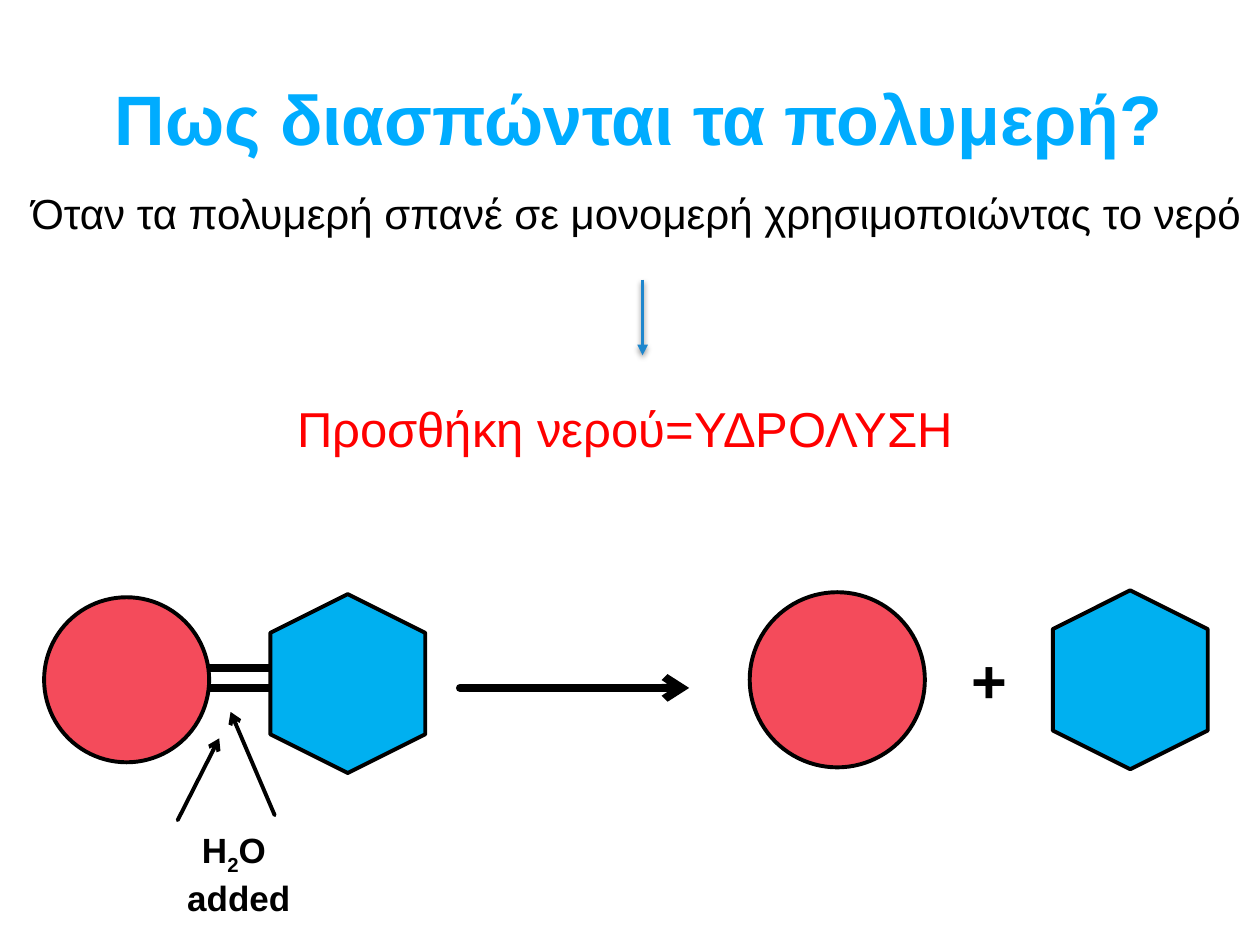
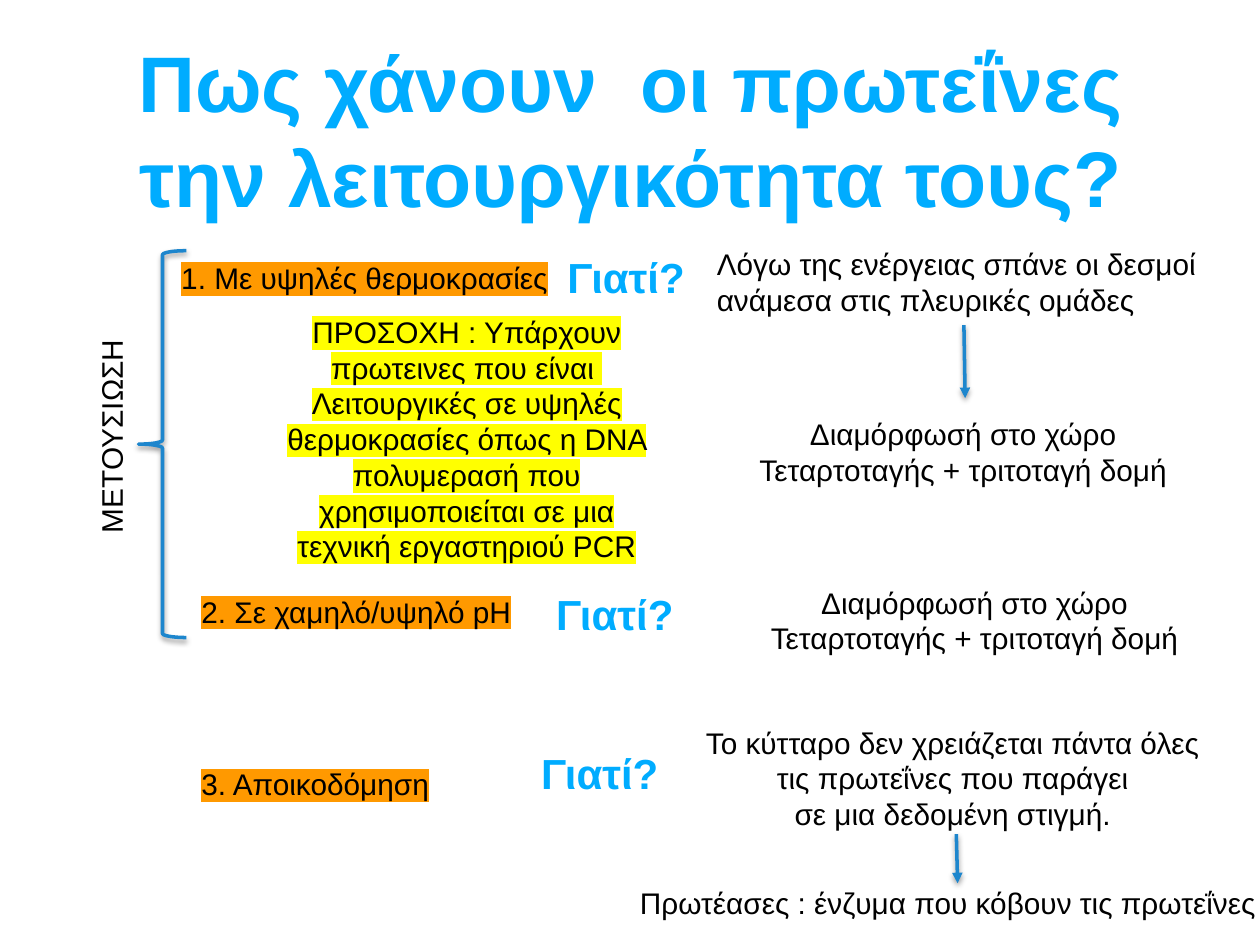
from dataclasses import dataclass
from typing import Optional

from lxml.etree import SubElement as Sub
from pptx import Presentation
from pptx.dml.color import RGBColor as Rgb
from pptx.enum.shapes import MSO_CONNECTOR as Link, MSO_SHAPE as Form
from pptx.enum.text import MSO_AUTO_SIZE as Fit, PP_ALIGN as Align
from pptx.oxml import parse_xml
from pptx.oxml.ns import nsdecls, qn
from pptx.util import Inches, Pt


# Shared look
@dataclass(frozen=True)
class Theme:
    font: str = "Arial"
    black: str = "000000"
    red: str = "FF0000"
    azure: str = "00ACFF"
    steel: str = "1D86CD"
    coral: str = "F44B5B"
    sky: str = "00B0F0"
    amber: str = "FF9900"
    yellow: str = "FFFF00"
    head: int = 40
    large: int = 45
    plus: int = 35
    key: int = 28
    lead: int = 24
    label: int = 20
    body: int = 17
    thick: float = 4.5
    edge: float = 2.25
    thin: float = 2


T = Theme()


@dataclass
class Text:
    box: tuple
    lines: list
    size: int = T.body
    color: str = T.black
    bold: bool = False
    mid: bool = False
    wrap: bool = False
    mark: Optional[str] = None
    turn: int = 0


@dataclass
class Line:
    start: tuple
    tip: tuple
    width: float = T.edge
    color: str = T.black
    arrow: Optional[str] = "arrow"
    shade: bool = False


@dataclass
class Shape:
    box: tuple
    form: Form
    fill: Optional[str] = None
    color: str = T.black
    width: float = T.edge
    turn: int = 0
    shade: bool = False


def set_all(target, values: dict) -> None:
    for name, value in values.items():
        setattr(target, name, value)


def shadow(props, shade: bool) -> None:
    """Soft drop shadow, or an empty list for none."""
    for old in props.findall(qn("a:effectLst")):
        props.remove(old)
    effects = Sub(props, qn("a:effectLst"))
    if shade:
        outer = Sub(effects, qn("a:outerShdw"), blurRad=str(Pt(3.1)),
                    dist=str(Pt(1.6)), dir="5400000", rotWithShape="0")
        color = Sub(outer, qn("a:srgbClr"), val=T.black)
        Sub(color, qn("a:alpha"), val="38000")


def stroke(line, color: str, width: float) -> None:
    line.color.rgb = Rgb.from_string(color)
    line.width = Pt(width)


def add_run(para, words: str, item: Text, low: bool) -> None:
    run = para.add_run()
    run.text = words
    set_all(run.font, {"size": Pt(item.size), "bold": item.bold, "name": T.font})
    run.font.color.rgb = Rgb.from_string(item.color)
    props = run.font._element
    if low:
        props.set("baseline", "-25000")
    if item.mark:
        props.find(qn("a:latin")).addprevious(parse_xml(
            f'<a:highlight {nsdecls("a")}><a:srgbClr val="{item.mark}"/></a:highlight>'))


def add_text(slide, item: Text) -> None:
    box = slide.shapes.add_textbox(*map(Inches, item.box))
    box.rotation = item.turn
    frame = box.text_frame
    set_all(frame, {"word_wrap": item.wrap, "auto_size": Fit.SHAPE_TO_FIT_TEXT})
    for i, words in enumerate(item.lines):
        para = frame.add_paragraph() if i else frame.paragraphs[0]
        para.alignment = Align.CENTER if item.mid else Align.LEFT
        # Odd pieces between underscores are subscripts
        for j, piece in enumerate(words.split("_")):
            add_run(para, piece, item, j % 2 == 1)


def add_line(slide, item: Line) -> None:
    ends = map(Inches, item.start + item.tip)
    link = slide.shapes.add_connector(Link.STRAIGHT, *ends)
    stroke(link.line, item.color, item.width)
    props = link._element.spPr
    edge = props.find(qn("a:ln"))
    if item.arrow:
        if not item.shade:
            edge.set("cap", "rnd")
        Sub(edge, qn("a:round"))
        Sub(edge, qn("a:tailEnd"), type=item.arrow)
    shadow(props, item.shade)


def add_form(slide, item: Shape) -> None:
    shape = slide.shapes.add_shape(item.form, *map(Inches, item.box))
    shape.rotation = item.turn
    shape.shadow.inherit = False
    if item.fill:
        shape.fill.solid()
        shape.fill.fore_color.rgb = Rgb.from_string(item.fill)
    else:
        shape.fill.background()
    stroke(shape.line, item.color, item.width)
    shadow(shape._element.spPr, item.shade)


DRAW = {Text: add_text, Line: add_line, Shape: add_form}


# Repeated elements
def title(box: tuple, words: str, size: int) -> Text:
    return Text(box, [words], size, T.azure, bold=True, mid=True, wrap=True)


def why(left: float, top: float) -> Text:
    return title((left, top, 3.24, 0.5), "Γιατί?", T.lead)


def cause(left: float, top: float, width: float, words: str) -> Text:
    return Text((left, top, width, 0.39), [words], mark=T.amber)


def fold(left: float, top: float) -> Text:
    return Text((left, top, 3.47, 0.67),
                ["Διαμόρφωσή στο χώρο", "Τεταρτοταγής + τριτοταγή δομή"], mid=True)


def step(start: tuple, tip: tuple) -> Line:
    return Line(start, tip, T.thin, T.steel, "triangle", shade=True)


def bond(left: float, top: float) -> Line:
    return Line((left, top), (left + 0.52, top), T.thick, arrow=None)


def ball(left: float, top: float, size: float) -> Shape:
    return Shape((left, top, size, size), Form.OVAL, T.coral)


def hexa(left: float, top: float) -> Shape:
    return Shape((left, top, 1.42, 1.23), Form.HEXAGON, T.sky, turn=90)


# Breaking polymers with water
SPLIT = [
    Text((0.15, 1.44, 9.85, 0.5),
         ["Όταν τα πολυμερή σπανέ σε μονομερή χρησιμοποιώντας το νερό"],
         T.lead, wrap=True),
    Line((3.65, 5.46), (5.47, 5.46), T.thick),
    bond(1.64, 5.3),
    bond(1.66, 5.46),
    Text((0.74, 6.53, 2.31, 0.77), ["H_2_O ", "added"], T.label,
         bold=True, mid=True, wrap=True),
    ball(0.35, 4.74, 1.31),
    ball(5.95, 4.7, 1.39),
    hexa(8.26, 4.78),
    hexa(2.05, 4.81),
    Text((7.34, 5.05, 1.02, 0.69), ["+"], T.plus, bold=True, mid=True, wrap=True),
    Line((2.18, 6.47), (1.83, 5.65)),
    Line((1.41, 6.51), (1.74, 5.86)),
    title((0.17, 0.55, 9.8, 0.77), "Πως διασπώνται τα πολυμερή?", T.head),
    Text((2.26, 3.11, 6.27, 0.57), ["Προσθήκη νερού=ΥΔΡΟΛΥΣΗ"],
         T.key, T.red, wrap=True),
    step((5.1, 2.22), (5.1, 2.82)),
]

# How proteins lose their function
LOSS = [
    title((0.53, 0.22, 8.95, 1.62),
          "Πως χάνουν  οι πρωτεΐνες την λειτουργικότητα τους?", T.large),
    cause(1.34, 2.01, 3.14, "1. Με υψηλές θερμοκρασίες"),
    why(3.35, 1.95),
    Text((5.59, 1.9, 4.11, 0.67),
         ["Λόγω της ενέργειας σπάνε οι δεσμοί", "ανάμεσα στις πλευρικές ομάδες"]),
    step((7.65, 2.58), (7.66, 3.16)),
    fold(5.91, 3.25),
    cause(1.5, 4.66, 2.68, "2. Σε χαμηλό/υψηλό pH"),
    Text((2.1, 2.44, 3.21, 2.11),
         ["ΠΡΟΣΟΧΗ : Υπάρχουν πρωτεινες που είναι ",
          "Λειτουργικές σε υψηλές θερμοκρασίες όπως η DNA πολυμερασή που "
          "χρησιμοποιείται σε μια τεχνική εργαστηριού PCR"],
         mid=True, wrap=True, mark=T.yellow),
    why(3.26, 4.62),
    fold(6, 4.59),
    cause(1.5, 6.03, 2.03, "3. Αποικοδόμηση"),
    why(3.14, 5.88),
    Text((5.48, 5.7, 4.23, 0.96),
         ["Το κύτταρο δεν χρειάζεται πάντα όλες ", "τις πρωτεΐνες που παράγει ",
          "σε μια δεδομένη στιγμή. "], mid=True),
    step((7.59, 6.62), (7.6, 7.01)),
    Text((4.98, 6.97, 5.14, 0.39), ["Πρωτέασες : ένζυμα που κόβουν τις πρωτεΐνες"]),
    Shape((1.1, 1.99, 0.38, 3.07), Form.LEFT_BRACE, color=T.steel,
          width=T.thin, shade=True),
    Text((0.01, 3.26, 1.75, 0.39), ["ΜΕΤΟΥΣΙΩΣΗ"], turn=270),
]


def main() -> None:
    deck = Presentation()
    set_all(deck, {"slide_width": Inches(10), "slide_height": Inches(7.5)})
    for page in (SPLIT, LOSS):
        slide = deck.slides.add_slide(deck.slide_layouts[6])
        for item in page:
            DRAW[type(item)](slide, item)
    deck.save("out.pptx")


if __name__ == "__main__":
    main()
